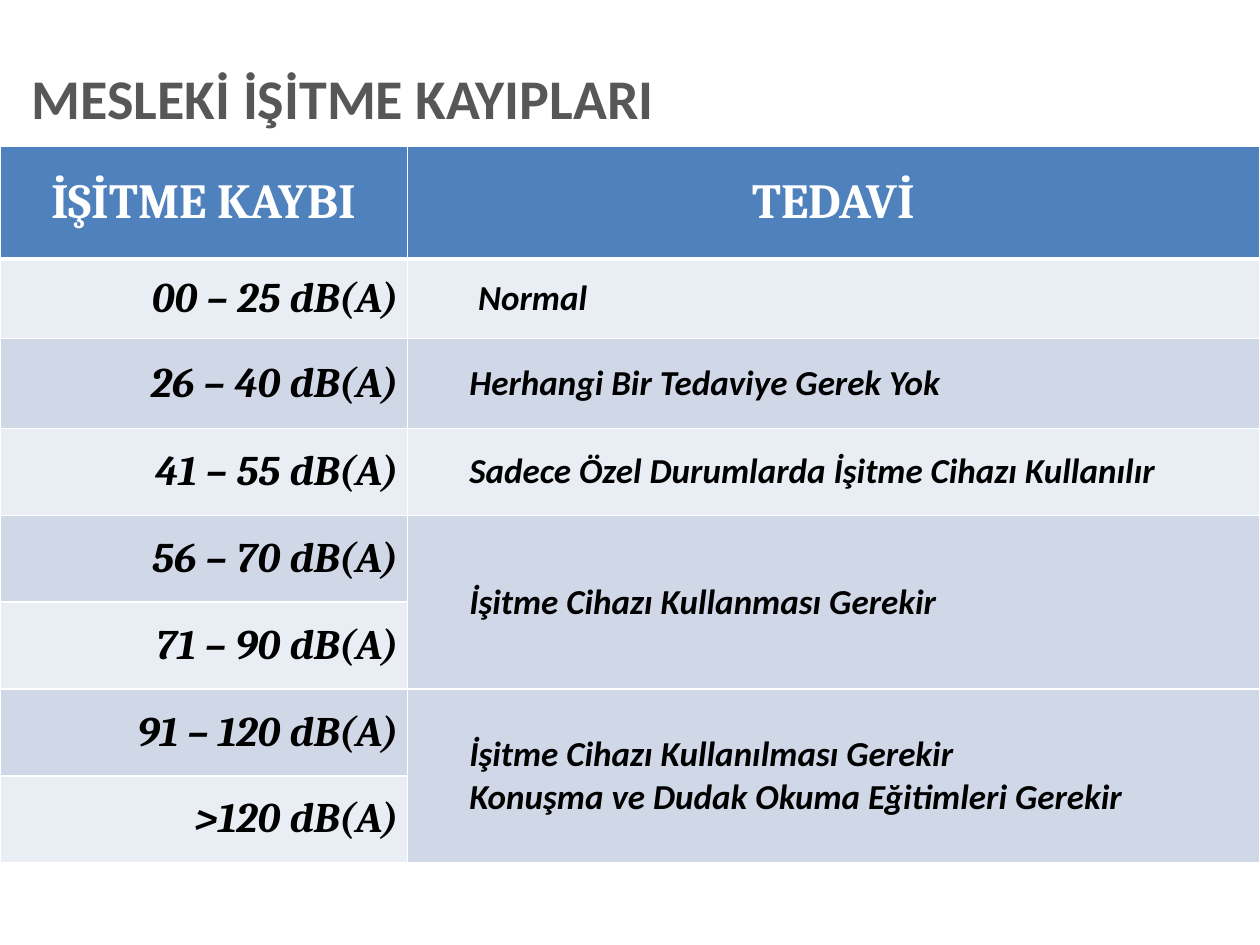
from pptx import Presentation
from pptx.dml.color import RGBColor
from pptx.enum.text import MSO_ANCHOR, PP_ALIGN
from pptx.oxml.ns import qn
from pptx.util import Cm, Pt
from lxml.etree import SubElement

WHITE = RGBColor(0xFF, 0xFF, 0xFF)
BLACK = RGBColor(0, 0, 0)
GREY = RGBColor(0x57, 0x57, 0x57)
BLUE = RGBColor(0x4F, 0x81, 0xBD)
LIGHT = RGBColor(0xE9, 0xED, 0xF4)
DARK = RGBColor(0xD0, 0xD8, 0xE8)


def style(run, face, size, color, italic=False):
    run.font.name = face
    run.font.size = Pt(size)
    run.font.bold = True
    run.font.italic = italic
    run.font.color.rgb = color


def add_borders(cell, top, bottom):
    properties = cell._tc.get_or_add_tcPr()
    for side, width in (("L", 1), ("R", 1), ("T", top), ("B", bottom)):
        line = SubElement(properties, qn(f"a:ln{side}"), w=str(Pt(width)))
        fill = SubElement(line, qn("a:solidFill"))
        SubElement(fill, qn("a:srgbClr"), val=str(WHITE))


presentation = Presentation()
presentation.slide_width = Cm(25.4)
presentation.slide_height = Cm(19.05)
slide = presentation.slides.add_slide(presentation.slide_layouts[6])

title = slide.shapes.add_textbox(Cm(0.64), Cm(1.14), Cm(24.49), Cm(1.8)).text_frame
title.word_wrap = True
title.vertical_anchor = MSO_ANCHOR.MIDDLE
title.margin_left = title.margin_right = 0
title.text = "MESLEKİ İŞİTME KAYIPLARI"
title.paragraphs[0].line_spacing = 0.9
style(title.paragraphs[0].runs[0], "Calibri", 32, GREY)

losses_and_treatments = [
    ("İŞİTME KAYBI", "TEDAVİ"),
    ("00 – 25 dB(A)", "Normal"),
    ("26 – 40 dB(A)", "Herhangi Bir Tedaviye Gerek Yok"),
    ("41 – 55 dB(A)", "Sadece Özel Durumlarda İşitme Cihazı Kullanılır"),
    ("56 – 70 dB(A)", "İşitme Cihazı Kullanması Gerekir"),
    ("71 – 90 dB(A)", ""),
    ("91 – 120 dB(A)",
     "İşitme Cihazı Kullanılması Gerekir\nKonuşma ve Dudak Okuma Eğitimleri Gerekir"),
    (">120 dB(A)", ""),
]
row_heights = [2.27, 1.6, 1.82] + [1.75] * 5

treatment_table = slide.shapes.add_table(
    len(row_heights), 2, 0, Cm(2.95), Cm(25.4), Cm(sum(row_heights))).table
treatment_table.columns[0].width = Cm(8.21)
treatment_table.columns[1].width = Cm(17.19)
for first in (4, 6):
    treatment_table.cell(first, 1).merge(treatment_table.cell(first + 1, 1))

for row, (height, texts) in enumerate(zip(row_heights, losses_and_treatments)):
    treatment_table.rows[row].height = Cm(height)
    for column, text in enumerate(texts):
        cell = treatment_table.cell(row, column)
        add_borders(cell, 3 if row == 1 else 1, 3 if row == 0 else 1)
        cell.fill.solid()
        cell.fill.fore_color.rgb = BLUE if row == 0 else LIGHT if row % 2 else DARK
        cell.vertical_anchor = MSO_ANCHOR.MIDDLE
        if row > 0:
            side_margin = 0 if column == 1 and row > 1 else 0.18
            cell.margin_left = cell.margin_right = Cm(side_margin)
            cell.margin_top = cell.margin_bottom = 0
        if cell.is_spanned:
            continue
        cell.text_frame.text = text
        for paragraph in cell.text_frame.paragraphs:
            if row == 0:
                paragraph.alignment = PP_ALIGN.CENTER
                style(paragraph.runs[0], "Cambria", 28, WHITE)
            elif column == 0:
                paragraph.alignment = PP_ALIGN.RIGHT
                style(paragraph.runs[0], "Cambria", 24, BLACK, True)
            else:
                paragraph._p.get_or_add_pPr().set("indent", str(Cm(1.25)))
                style(paragraph.runs[0], "Calibri", 20, BLACK, True)

presentation.save("out.pptx")
